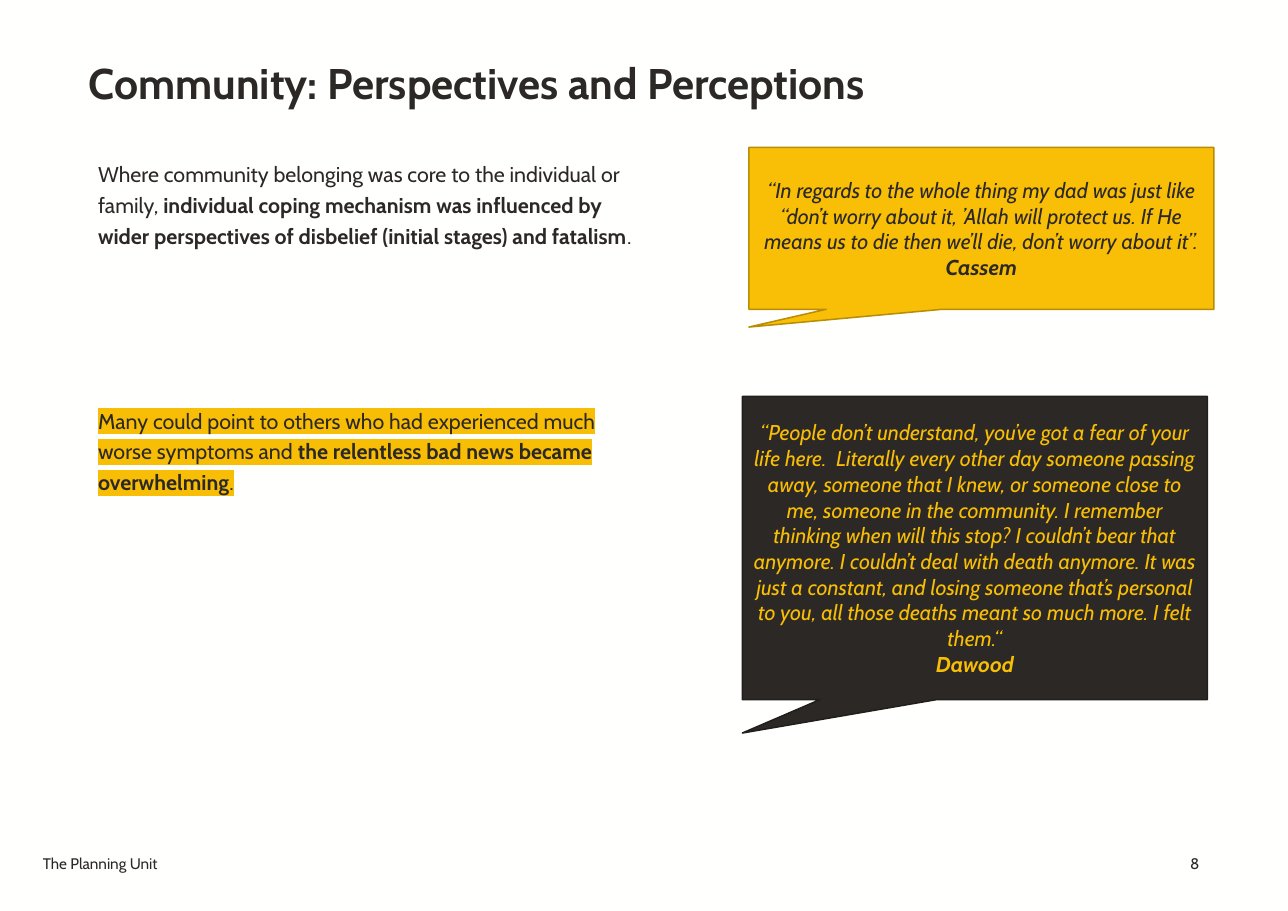
import pptx
import pptx.util
import pptx.dml.color
import pptx.enum.shapes
import pptx.enum.text
import pptx.oxml
import pptx.oxml.ns

Cm, Pt = pptx.util.Cm, pptx.util.Pt
RGB = pptx.dml.color.RGBColor.from_string
PP_ALIGN = pptx.enum.text.PP_ALIGN
MSO_ANCHOR = pptx.enum.text.MSO_ANCHOR
COLORS = {
    "page": "FFFFFE", "ink": "2C2825", "ink_line": "211E1B",
    "yellow": "F9BF07", "yellow_line": "B88D05", "mark": "F8BE05",
}


def add_run(p, text, size, color="ink", highlight=None, **style):
    r = p.add_run()
    r.text = text
    fmt = {"name": "Cabin", "size": Pt(size), "bold": False, "italic": False, **style}
    for key, value in fmt.items():
        setattr(r.font, key, value)
    r.font.color.rgb = RGB(COLORS[color])
    if highlight:
        mark = pptx.oxml.parse_xml(
            f'<a:highlight {pptx.oxml.ns.nsdecls("a")}>'
            f'<a:srgbClr val="{COLORS[highlight]}"/></a:highlight>')
        r.font.fill._xPr.find(pptx.oxml.ns.qn("a:solidFill")).addnext(mark)


def set_frame(sp, box, **style):
    sp.left, sp.top, sp.width, sp.height = map(Cm, box)
    tf = sp.text_frame
    fmt = {"word_wrap": True, "auto_size": pptx.enum.text.MSO_AUTO_SIZE.NONE,
           "vertical_anchor": MSO_ANCHOR.TOP}
    fmt.update({f"margin_{side}": Cm(0.2) for side in ("left", "top", "right", "bottom")})
    fmt.update(style)
    for key, value in fmt.items():
        setattr(tf, key, value)
    return tf


prs = pptx.Presentation()
prs.slide_width, prs.slide_height = Cm(29.7), Cm(21)
s = prs.slides.add_slide(prs.slide_layouts[1])
s.background.fill.solid()
s.background.fill.fore_color.rgb = RGB(COLORS["page"])

tf = set_frame(s.shapes.title, (1.85, 1.09, 26, 1.6), vertical_anchor=MSO_ANCHOR.BOTTOM)
p = tf.paragraphs[0]
p.alignment = PP_ALIGN.LEFT
add_run(p, "Community: Perspectives and Perceptions", 28, bold=True)

findings = [
    (None, 100.5, [
        ("Where community belonging was core to the individual or family, ", False),
        ("individual coping mechanism was influenced by wider perspectives of "
         "disbelief (initial stages) and fatalism", True),
        (".", False)]),
    ("mark", 10, [
        ("Many could point to others who had experienced much worse symptoms and ", False),
        ("the relentless bad news became overwhelming", True),
        (".", False)]),
]
tf = set_frame(s.placeholders[1], (2.06, 3.4, 13.16, 15.4))
for i, (highlight, gap, runs) in enumerate(findings):
    p = tf.add_paragraph() if i else tf.paragraphs[0]
    fmt = {"alignment": PP_ALIGN.LEFT, "line_spacing": 1.2,
           "space_before": Pt(0), "space_after": Pt(gap)}
    for key, value in fmt.items():
        setattr(p, key, value)
    pPr = p._p.get_or_add_pPr()
    pPr.set("marL", "0")
    pPr.set("indent", "0")
    pPr.append(pptx.oxml.parse_xml(f'<a:buNone {pptx.oxml.ns.nsdecls("a")}/>'))
    for text, bold in runs:
        add_run(p, text, 14, highlight=highlight, bold=bold)

quotes = [
    ((17.27, 3.4, 10.72, 3.73), "yellow", "yellow_line", "ink", "Cassem",
     "“In regards to the whole thing my dad was just like “don’t worry about it, "
     "’Allah will protect us. If He means us to die then we’ll die, don’t worry about it”."),
    ((17.12, 9.14, 10.72, 6.99), "ink", "ink_line", "mark", "Dawood",
     "“People don’t understand, you’ve got a fear of your life here.  Literally every "
     "other day someone passing away, someone that I knew, or someone close to me, "
     "someone in the community. I remember thinking when will this stop? I couldn’t "
     "bear that anymore. I couldn’t deal with death anymore. It was just a constant, "
     "and losing someone that’s personal to you, all those deaths meant so much more. "
     "I felt them.“"),
]
for box, fill, line, color, speaker, quote in quotes:
    sp = s.shapes.add_shape(
        pptx.enum.shapes.MSO_SHAPE.RECTANGULAR_CALLOUT, *map(Cm, box))
    sp.adjustments[0], sp.adjustments[1] = -0.5, 0.61
    sp.shadow.inherit = False
    sp.fill.solid()
    sp.fill.fore_color.rgb = RGB(COLORS[fill])
    sp.line.color.rgb = RGB(COLORS[line])
    sp.line.width = Pt(1)
    tf = set_frame(sp, box, vertical_anchor=MSO_ANCHOR.MIDDLE,
                   margin_left=Cm(0.25), margin_right=Cm(0.25),
                   margin_top=Cm(0.13), margin_bottom=Cm(0.13))
    for p, text, bold in ((tf.paragraphs[0], quote, False),
                          (tf.add_paragraph(), speaker, True)):
        p.alignment = PP_ALIGN.CENTER
        add_run(p, text, 14, color, bold=bold, italic=True)

footers = [
    ((0.79, 19.5, 3.25, 1.02), PP_ALIGN.LEFT, "The Planning Unit"),
    ((25.86, 19.5, 2, 1.02), PP_ALIGN.RIGHT, "8"),
]
for box, align, text in footers:
    tf = set_frame(s.shapes.add_textbox(*map(Cm, box)), box)
    p = tf.paragraphs[0]
    p.alignment = align
    add_run(p, text, 10)

prs.save("out.pptx")
